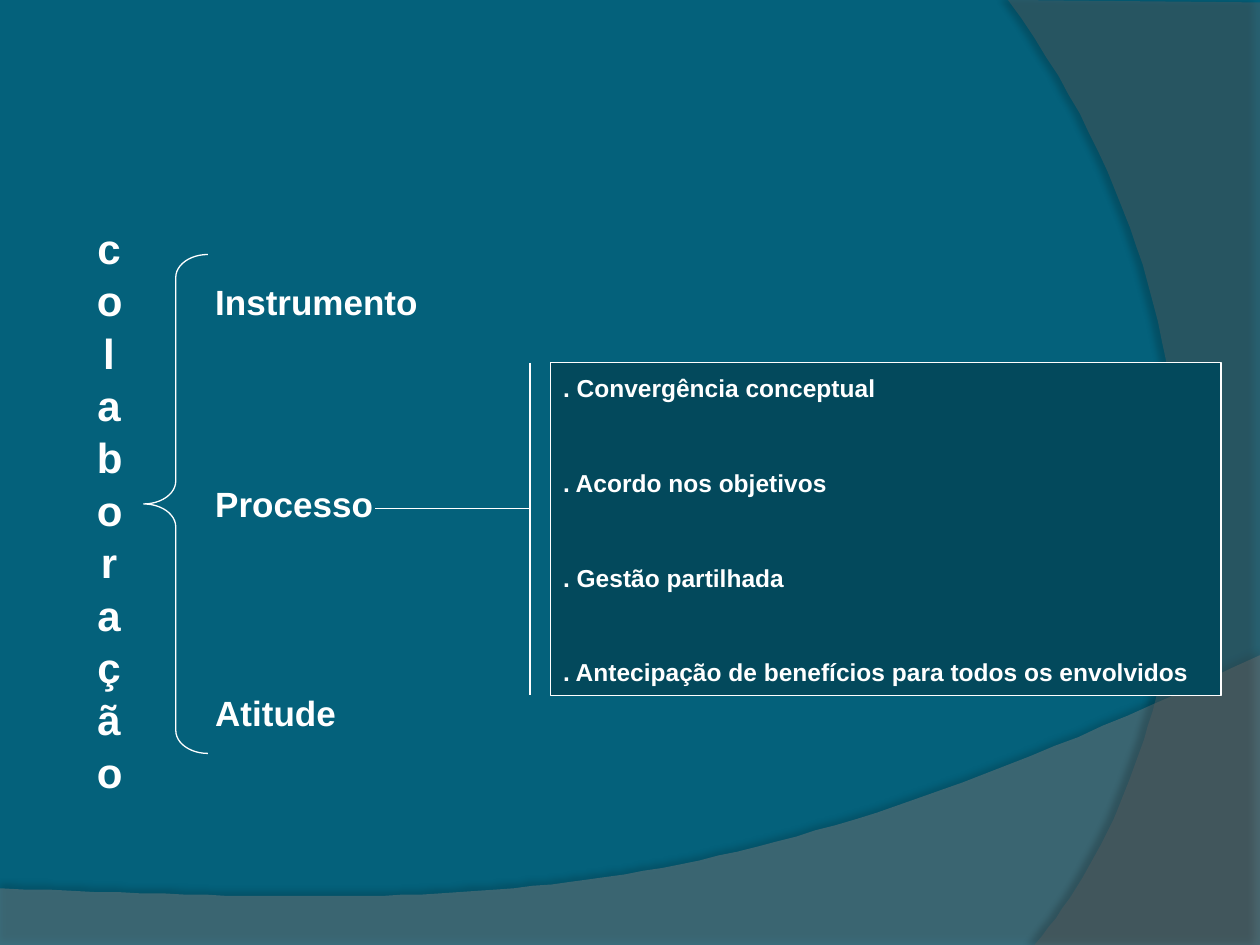
from lxml import etree
from pptx import Presentation, util as u
from pptx.dml.color import RGBColor
from pptx.enum import shapes, text
from pptx.oxml.ns import qn

PX = 9144
TEAL = RGBColor(0x04, 0x61, 0x7B)
DARK_TEAL = RGBColor(0x03, 0x49, 0x5C)
GREY = RGBColor(0x7F, 0x7F, 0x7F)
DARK_GREY = RGBColor(0x5E, 0x5E, 0x5E)
WHITE = RGBColor(0xFF, 0xFF, 0xFF)


def px(*values):
    return [u.Emu(value * PX) for value in values]


def bezier(start, control_1, control_2, end, steps=60):
    points = []
    for step in range(steps + 1):
        t = step / steps
        weights = ((1 - t) ** 3, 3 * t * (1 - t) ** 2, 3 * t * t * (1 - t), t ** 3)
        corners = (start, control_1, control_2, end)
        points.append(tuple(sum(w * c[axis] for w, c in zip(weights, corners)) for axis in (0, 1)))
    return points


class SlideBuilder:
    font = "Arial"
    color = WHITE
    line_width = u.Pt(0.75)

    def __init__(self, slide):
        self.slide = slide

    def background(self, color):
        fill = self.slide.background.fill
        fill.solid()
        fill.fore_color.rgb = color

    def wave(self, points, color, opacity, shadow_opacity, distance, direction):
        builder = self.slide.shapes.build_freeform(*points[0], scale=PX)
        builder.add_line_segments(points[1:], close=True)
        shape = builder.convert_to_shape()
        shape.fill.solid()
        shape.fill.fore_color.rgb = color
        shape.line.fill.background()
        shape.shadow.inherit = False
        properties = shape._element.spPr
        fill_color = properties.find(qn("a:solidFill")).find(qn("a:srgbClr"))
        etree.SubElement(fill_color, qn("a:alpha"), val=str(opacity * 1000))
        shadow = etree.SubElement(
            properties.find(qn("a:effectLst")), qn("a:outerShdw"),
            blurRad=str(u.Pt(4)), dist=str(u.Pt(distance)),
            dir=str(direction * 60000), algn="ctr", rotWithShape="0")
        shadow_color = etree.SubElement(shadow, qn("a:srgbClr"), val="000000")
        etree.SubElement(shadow_color, qn("a:alpha"), val=str(shadow_opacity * 1000))

    def outline(self, kind, box, adjustments, fill=None):
        shape = self.slide.shapes.add_shape(kind, *px(*box))
        for index, value in enumerate(adjustments):
            shape.adjustments[index] = value
        if fill is None:
            shape.fill.background()
        else:
            shape.fill.solid()
            shape.fill.fore_color.rgb = fill
        shape.line.color.rgb = self.color
        shape.line.width = self.line_width
        shape.shadow.inherit = False
        return shape

    def set_text(self, frame, lines, size, align=text.PP_ALIGN.LEFT, gap=0):
        frame.word_wrap = True
        frame.vertical_anchor = text.MSO_ANCHOR.TOP
        frame.text = "\n".join(lines)
        for paragraph in frame.paragraphs:
            paragraph.alignment = align
            paragraph.space_after = u.Pt(gap)
            paragraph.font.name = self.font
            paragraph.font.size = u.Pt(size)
            paragraph.font.bold = True
            paragraph.font.color.rgb = self.color

    def label(self, words, box, size, align=text.PP_ALIGN.LEFT, spacing=1.0):
        frame = self.slide.shapes.add_textbox(*px(*box)).text_frame
        self.set_text(frame, [words], size, align)
        frame.paragraphs[0].line_spacing = spacing

    def callout(self, lines, box, adjustments, fill):
        kind = shapes.MSO_SHAPE.LINE_CALLOUT_2_BORDER_AND_ACCENT_BAR
        frame = self.outline(kind, box, adjustments, fill).text_frame
        frame.margin_top = u.Inches(0.08)
        self.set_text(frame, lines, 14, gap=37.4)


def main():
    presentation = Presentation()
    presentation.slide_width, presentation.slide_height = px(1000, 750)
    builder = SlideBuilder(presentation.slides.add_slide(presentation.slide_layouts[6]))
    builder.background(TEAL)

    lower_curve = bezier((1000, 520), (559, 729), (391, 719), (0, 705))
    builder.wave([(0, 751), (1000, 751)] + lower_curve, GREY, 45, 35, 3.5, 270)
    right_curve = bezier((821, 750), (935, 619), (1018, 300), (800, 0))
    builder.wave([(1000, 2), (1000, 750)] + right_curve, DARK_GREY, 40, 45, 4, 180)

    builder.outline(shapes.MSO_SHAPE.LEFT_BRACE, (114, 202, 51, 396), (0.357, 0.5))
    builder.label("colaboração", (67, 170, 39, 454), 24, text.PP_ALIGN.CENTER, 1.04)
    for words, top in (("Instrumento", 218), ("Processo", 378), ("Atitude", 544)):
        builder.label(words, (161, top, 276, 44), 20)

    builder.callout(
        [". Convergência conceptual", ". Acordo nos objetivos", ". Gestão partilhada",
         ". Antecipação de benefícios para todos os envolvidos"],
        (437, 288, 532, 264), (0.438, -0.031, 0.438, -0.146, 0.438, -0.262), DARK_TEAL)

    presentation.save("out.pptx")


if __name__ == "__main__":
    main()
